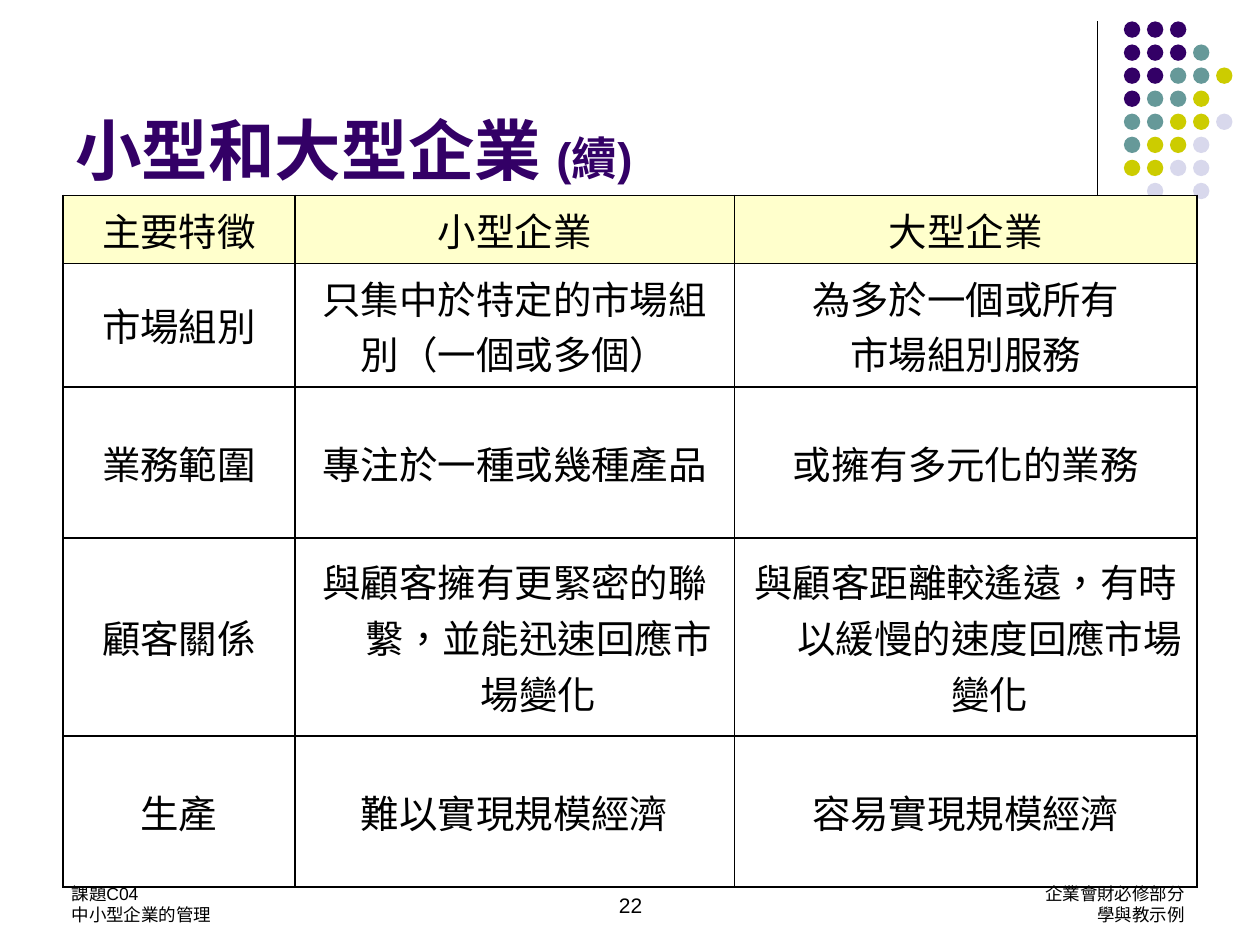
import dataclasses

import pptx
import pptx.dml.color
import pptx.enum.shapes
import pptx.enum.text
import pptx.oxml
import pptx.oxml.ns
import pptx.util
from pptx.util import Inches

Align = pptx.enum.text.PP_ALIGN
Anchor = pptx.enum.text.MSO_ANCHOR

FONT = "Arial"
LANGUAGE = "zh-TW"
BLACK = "000000"
PURPLE = "330066"
HEADER_FILL = "FFFFCC"

DOT_COLORS = {"P": PURPLE, "T": "669999", "Y": "CCCC00", "L": "D8D8EC"}
DOT_ROWS = ["PPP", "PPPT", "PPTTY", "PTTY", "TTYYL", "TYYL", "YYLL", " L L"]
DOT_LEFT, DOT_TOP, DOT_PITCH, DOT_SIZE = 8.92, 0.17, 0.183, 0.13

COLUMN_WIDTHS = [1.84, 3.49, 3.67]
ROW_HEIGHTS = [0.54, 0.98, 1.2, 1.57, 1.2]
TABLE_ROWS = [
    ["主要特徵", "小型企業", "大型企業"],
    ["市場組別", "只集中於特定的市場組\n別（一個或多個）", "為多於一個或所有\n市場組別服務"],
    ["業務範圍", "專注於一種或幾種產品", "或擁有多元化的業務"],
    ["顧客關係", "與顧客擁有更緊密的聯繫，並能迅速回應市場變化",
     "與顧客距離較遙遠，有時以緩慢的速度回應市場變化"],
    ["生產", "難以實現規模經濟", "容易實現規模經濟"],
]


@dataclasses.dataclass
class Footer:
    text: str
    left: float
    top: float
    width: float
    margin_top: float
    size: int
    align: Align


FOOTERS = [
    Footer("企業會財必修部分\n學與教示例", 5.79, 6.8, 3.71, 0.21, 10, Align.RIGHT),
    Footer("22", 3.42, 6.83, 3.17, 0.25, 12, Align.CENTER),
    Footer("課題C04\n中小型企業的管理", 0.47, 6.8, 2.33, 0.21, 10, Align.LEFT),
]


def color(value: str) -> pptx.dml.color.RGBColor:
    return pptx.dml.color.RGBColor.from_string(value)


def style_font(font, size: float, value: str, bold: bool = False) -> None:
    font.name = FONT
    font.size = pptx.util.Pt(size)
    font.bold = bold
    font.color.rgb = color(value)


def add_divider(slide) -> None:
    line = slide.shapes.add_connector(
        pptx.enum.shapes.MSO_CONNECTOR.STRAIGHT,
        Inches(8.71), Inches(0.17), Inches(8.71), Inches(1.83))
    line.line.color.rgb = color(BLACK)
    line.line.width = pptx.util.Pt(0.75)
    line._element.spPr.append(pptx.oxml.parse_xml(
        f"<a:effectLst {pptx.oxml.ns.nsdecls('a')}/>"))


def add_dots(slide) -> None:
    for row, pattern in enumerate(DOT_ROWS):
        for column, key in enumerate(pattern):
            if key == " ":
                continue
            dot = slide.shapes.add_shape(
                pptx.enum.shapes.MSO_SHAPE.OVAL,
                Inches(DOT_LEFT + column * DOT_PITCH), Inches(DOT_TOP + row * DOT_PITCH),
                Inches(DOT_SIZE), Inches(DOT_SIZE))
            dot.shadow.inherit = False
            dot.fill.solid()
            dot.fill.fore_color.rgb = color(DOT_COLORS[key])
            dot.line.fill.background()


def add_footer(slide, footer: Footer) -> None:
    shape = slide.shapes.add_textbox(
        Inches(footer.left), Inches(footer.top), Inches(footer.width), Inches(0.5))
    frame = shape.text_frame
    frame.word_wrap = True
    frame.margin_top = Inches(footer.margin_top)
    frame.text = footer.text
    for paragraph in frame.paragraphs:
        paragraph.alignment = footer.align
        paragraph.line_spacing = pptx.util.Pt(footer.size * 1.2)
        style_font(paragraph.font, footer.size, BLACK)


def add_title(slide) -> None:
    shape = slide.shapes.add_textbox(Inches(0.5), Inches(0.13), Inches(8.25), Inches(1.42))
    frame = shape.text_frame
    frame.word_wrap = True
    frame.vertical_anchor = Anchor.BOTTOM
    for text, size in [("小型和大型企業 ", 38), ("(續)", 26)]:
        run = frame.paragraphs[0].add_run()
        run.text = text
        style_font(run.font, size, PURPLE, bold=True)


def add_borders(cell) -> None:
    """Draw a thin black line on all four sides of the cell."""
    properties = cell._tc.get_or_add_tcPr()
    for index, side in enumerate(["lnL", "lnR", "lnT", "lnB"]):
        properties.insert(index, pptx.oxml.parse_xml(
            f'<a:{side} {pptx.oxml.ns.nsdecls("a")} w="12700"><a:solidFill>'
            f'<a:srgbClr val="{BLACK}"/></a:solidFill></a:{side}>'))


def fill_cell(cell, text: str, is_header: bool) -> None:
    cell.text = text
    cell.vertical_anchor = Anchor.TOP if is_header else Anchor.MIDDLE
    if is_header:
        cell.fill.solid()
        cell.fill.fore_color.rgb = color(HEADER_FILL)
    else:
        cell.fill.background()
    add_borders(cell)
    for paragraph in cell.text_frame.paragraphs:
        paragraph.alignment = Align.CENTER
        style_font(paragraph.font, 22, BLACK)
        properties = paragraph._p.get_or_add_pPr()
        properties.set("marL", str(Inches(0.38)))
        properties.set("indent", str(Inches(-0.38)))
        for run in paragraph.runs:
            run._r.get_or_add_rPr().set("lang", LANGUAGE)


def add_comparison_table(slide) -> None:
    table = slide.shapes.add_table(
        len(ROW_HEIGHTS), len(COLUMN_WIDTHS), Inches(0.5), Inches(1.55),
        Inches(sum(COLUMN_WIDTHS)), Inches(sum(ROW_HEIGHTS))).table
    table.first_row = False
    table.horz_banding = False
    for column, width in zip(table.columns, COLUMN_WIDTHS):
        column.width = Inches(width)
    for row_index, (row, height) in enumerate(zip(table.rows, ROW_HEIGHTS)):
        row.height = Inches(height)
        for cell, text in zip(row.cells, TABLE_ROWS[row_index]):
            fill_cell(cell, text, is_header=row_index == 0)


def main() -> None:
    presentation = pptx.Presentation()
    presentation.slide_width = Inches(10)
    presentation.slide_height = Inches(7.5)
    slide = presentation.slides.add_slide(presentation.slide_layouts[6])
    add_divider(slide)
    add_dots(slide)
    for footer in FOOTERS:
        add_footer(slide, footer)
    add_title(slide)
    add_comparison_table(slide)
    presentation.save("out.pptx")


if __name__ == "__main__":
    main()
